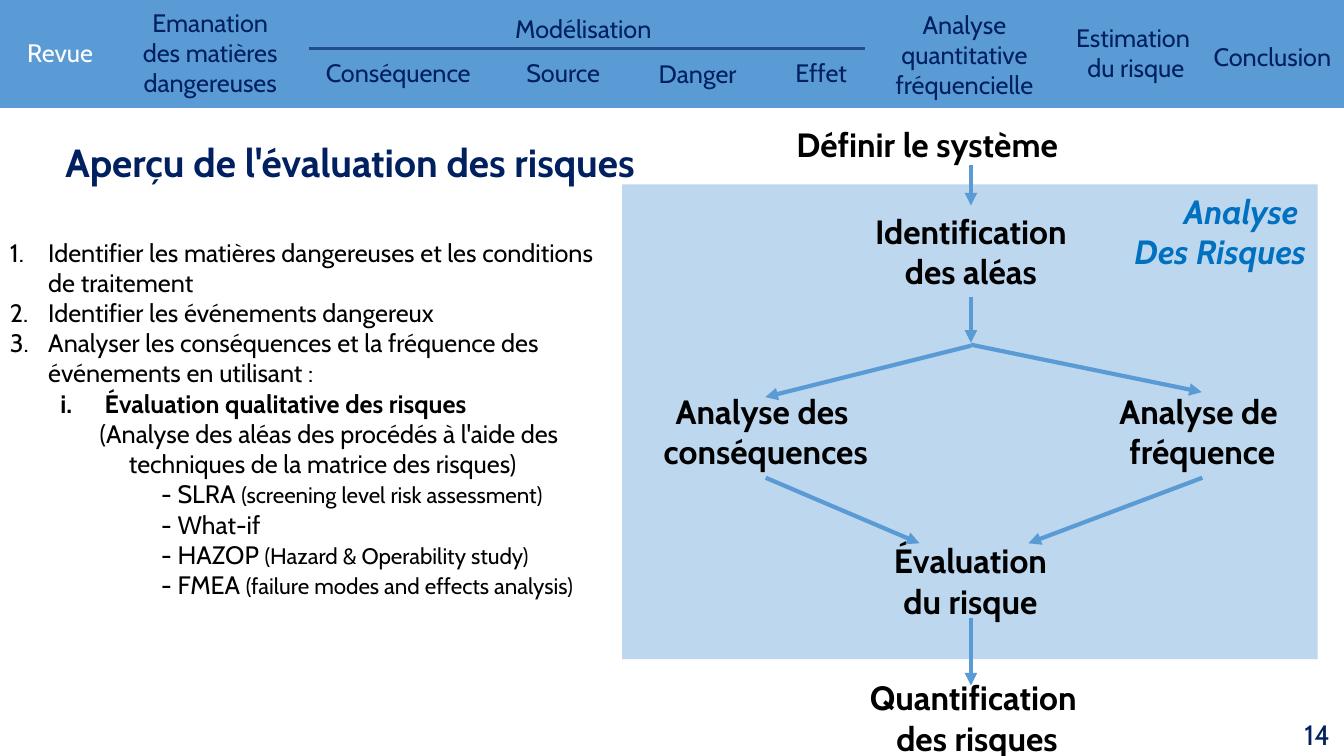
import pptx
import pptx.util
import pptx.dml.color
import pptx.enum.shapes
import pptx.enum.text
import pptx.oxml.ns
import lxml.etree

Inches = pptx.util.Inches
Pt = pptx.util.Pt
RGB = pptx.dml.color.RGBColor.from_string
qn = pptx.oxml.ns.qn
ALIGN = {"l": pptx.enum.text.PP_ALIGN.LEFT, "c": pptx.enum.text.PP_ALIGN.CENTER,
         "r": pptx.enum.text.PP_ALIGN.RIGHT}
COLORS = {"blue": "5B9BD5", "pale": "BDD7EE", "navy": "002060", "rule": "224D8C",
          "label": "0070C0", "black": "000000", "white": "FFFFFF"}

deck = pptx.Presentation()
deck.slide_width, deck.slide_height = Inches(13.33), Inches(7.5)
slide = deck.slides.add_slide(deck.slide_layouts[6])
shapes = slide.shapes


def write(text, box, size=18, color="black", bold=False, italic=False, align="l", middle=False):
    """Add a text box; text is a string or a list of paragraphs made of (text, format) runs."""
    shape = shapes.add_textbox(*map(Inches, box))
    frame = shape.text_frame
    frame.word_wrap = True
    if middle:
        frame.vertical_anchor = pptx.enum.text.MSO_ANCHOR.MIDDLE
    paras = [[(line, {})] for line in text.split("\n")] if isinstance(text, str) else text
    for i, runs in enumerate(paras):
        para = frame.paragraphs[0] if i == 0 else frame.add_paragraph()
        para.alignment = ALIGN[align]
        for words, form in runs:
            run = para.add_run()
            run.text = words
            font = run.font
            font.name = "Cabin"
            font.size = Pt(form.get("size", size))
            font.bold = form.get("bold", bold)
            font.italic = italic
            font.color.rgb = RGB(COLORS[color])
    return shape


def draw(start, end, color="blue", width=3, arrow=True):
    """Add a straight line, with an arrowhead at its end if wanted."""
    line = shapes.add_connector(pptx.enum.shapes.MSO_CONNECTOR.STRAIGHT,
                                *map(Inches, start + end))
    line.line.color.rgb = RGB(COLORS[color])
    line.line.width = Pt(width)
    props = line._element.spPr
    if arrow:
        lxml.etree.SubElement(props.find(qn("a:ln")), qn("a:tailEnd"), type="triangle")
    lxml.etree.SubElement(props, qn("a:effectLst"))
    return line


# Top bar and analysis panel
for box, color in [((0, 0, 13.33, 1.07), "blue"), ((6.17, 1.83, 6.9, 4.71), "pale")]:
    rect = shapes.add_shape(pptx.enum.shapes.MSO_SHAPE.RECTANGLE, *map(Inches, box))
    rect.shadow.inherit = False
    rect.fill.solid()
    rect.fill.fore_color.rgb = RGB(COLORS[color])
    rect.line.fill.background()

# Menu
write("Revue", (0.17, 0.32, 1.11, 0.4), color="white")
for text, box in [
    ("Emanation des matières dangereuses", (1.27, 0.02, 1.63, 1)),
    ("Modélisation", (3.06, 0.08, 5.45, 0.4)),
    ("Conséquence", (3.06, 0.52, 1.78, 0.4)),
    ("Source", (4.59, 0.52, 1.99, 0.4)),
    ("Danger", (6.1, 0.53, 1.64, 0.38)),
    ("Effet", (7.27, 0.52, 1.75, 0.39)),
    ("Analyse quantitative fréquencielle", (8.69, 0.04, 1.75, 0.96)),
    ("Estimation \ndu risque", (10.39, 0.17, 1.75, 0.69)),
    ("Conclusion", (11.84, 0.36, 1.56, 0.4)),
]:
    write(text, box, color="navy", align="c")
draw((3.06, 0.48), (8.58, 0.48), color="rule", width=2.25, arrow=False)

# Flow chart steps
write("Définir le système", (7.8, 1.18, 3.3, 0.5), size=24, bold=True)
steps = {}
for name, text, box in [
    ("hazard", "Identification des aléas", (8.38, 2.04, 2.5, 0.91)),
    ("effect", "Analyse des \nconséquences", (6.31, 3.83, 2.57, 0.91)),
    ("rate", "Analyse de \nfréquence", (10.86, 3.83, 2.13, 0.91)),
    ("risk", "Évaluation du risque", (8.55, 5.31, 2.15, 0.91)),
    ("sum", "Quantification \ndes risques", (8, 6.67, 3.38, 0.91)),
]:
    steps[name] = write(text, box, size=24, bold=True, align="c")
write("Analyse \nDes Risques", (10.8, 1.84, 2.25, 1.31), size=24, color="label",
      bold=True, italic=True, align="r")

# Flow chart arrows, with the steps they leave and reach
mid = 9.63
for start, end, source, target in [
    ((mid, 1.64), (mid, 2.04), None, "hazard"),
    ((mid, 2.95), (mid, 3.4), "hazard", None),
    ((mid, 3.42), (11.92, 3.89), None, None),
    ((mid, 3.43), (7.59, 3.94), None, None),
    ((7.59, 4.74), (9.12, 5.39), "effect", None),
    ((11.92, 4.74), (10.2, 5.39), "rate", None),
    ((mid, 6.13), (mid, 6.8), None, None),
]:
    arrow = draw(start, end)
    if source:
        arrow.begin_connect(steps[source], 2)
    if target:
        arrow.end_connect(steps[target], 0)

# Title and slide number
write("Aperçu de l'évaluation des risques", (0.55, 1.32, 12.26, 0.6), size=28,
      color="navy", bold=True)
write("14", (10.18, 7.08, 3.11, 0.4), size=20, color="navy", align="r", middle=True)

# Numbered list: text, small text, left margin, first-line indent, numbering
small = {"size": 16}
items = [
    ("Identifier les matières dangereuses et les conditions de traitement",
     "", 0.38, -0.38, "arabicPeriod"),
    ("Identifier les événements dangereux", "", 0.38, -0.38, "arabicPeriod"),
    ("Analyser les conséquences et la fréquence des événements en utilisant :",
     "", 0.38, -0.38, "arabicPeriod"),
    ("Évaluation qualitative des risques", "", 0.94, -0.44, "romanLcPeriod"),
    ("(Analyse des aléas des procédés à l'aide des techniques de la matrice des risques)",
     "", 1.18, -0.29, None),
    ("- SLRA ", "(screening level risk assessment)", 1.5, 0, None),
    ("- What-if", "", 1.5, 0, None),
    ("- HAZOP ", "(Hazard & Operability study)", 1.5, 0, None),
    ("- FMEA ", "(failure modes and effects analysis)", 1.5, 0, None),
]
paras = [[(text, {"bold": kind == "romanLcPeriod"})] + ([(note, small)] if note else [])
         for text, note, left, first, kind in items]
body = write(paras, (0, 2.3, 6.18, 3.82))
for para, (text, note, left, first, kind) in zip(body.text_frame.paragraphs, items):
    para.level = 0 if left < 0.5 else 1
    props = para._p.get_or_add_pPr()
    props.set("marL", str(Inches(left)))
    props.set("indent", str(Inches(first)))
    if kind:
        lxml.etree.SubElement(props, qn("a:buFont"), typeface="+mj-lt")
        lxml.etree.SubElement(props, qn("a:buAutoNum"), type=kind)

deck.save("out.pptx")
